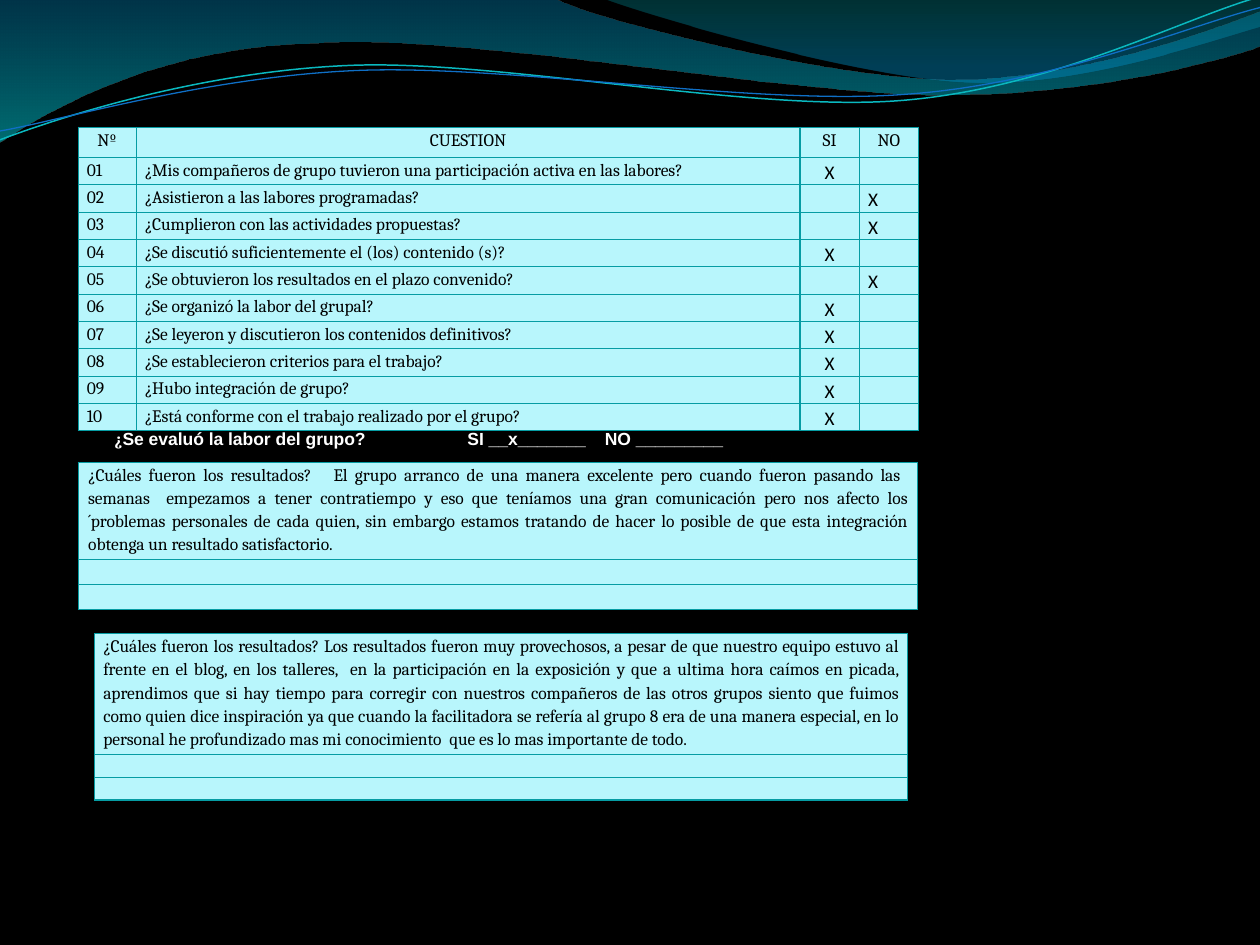
from lxml import etree
from pptx import Presentation
from pptx.dml.color import RGBColor
from pptx.enum import text
from pptx.oxml.ns import qn
from pptx.util import Inches, Pt

# Content
HEADINGS = ["Nº", "CUESTION", "SI", "NO"]
QUESTIONS = [
    ("¿Mis compañeros de grupo tuvieron una participación activa en las labores?", "SI"),
    ("¿Asistieron a las labores programadas?", "NO"),
    ("¿Cumplieron con las actividades propuestas?", "NO"),
    ("¿Se discutió suficientemente el (los) contenido (s)?", "SI"),
    ("¿Se obtuvieron los resultados en el plazo convenido?", "NO"),
    ("¿Se organizó la labor del grupal?", "SI"),
    ("¿Se leyeron y discutieron los contenidos definitivos?", "SI"),
    ("¿Se establecieron criterios para el trabajo?", "SI"),
    ("¿Hubo integración de grupo?", "SI"),
    ("¿Está conforme con el trabajo realizado por el grupo?", "SI"),
]
EVALUATED = [("¿", "Cambria"),
             ("Se evaluó la labor del grupo?\tSI __x_______\tNO _________", "Arial")]
GROUP_RESULT = (
    "¿Cuáles fueron los resultados?   El grupo arranco de una manera excelente pero cuando "
    "fueron pasando las  semanas  empezamos a tener contratiempo y eso que teníamos una gran "
    "comunicación pero nos afecto los ´problemas personales de cada quien, sin embargo estamos "
    "tratando de hacer lo posible de que esta integración obtenga un resultado satisfactorio.")
PERSONAL_RESULT = (
    "¿Cuáles fueron los resultados? Los resultados fueron muy provechosos, a pesar de que "
    "nuestro equipo estuvo al frente en el blog, en los talleres,  en la participación en la "
    "exposición y que a ultima hora caímos en picada, aprendimos que si hay tiempo para corregir "
    "con nuestros compañeros de las otros grupos siento que fuimos como quien dice inspiración ya "
    "que cuando la facilitadora se refería al grupo 8 era de una manera especial, en lo personal "
    "he profundizado mas mi conocimiento  que es lo mas importante de todo.")

THEME = dict(background="000000", cell="B8F6FC", border="069CA3", ink="000000", light="FFFFFF",
             body="Cambria", mark="Calibri", body_size=10, mark_size=11, spacing=1.15)

# Waves: a start point, then line ends (2 numbers) or Bezier curves (6 numbers)
WAVE_FILLS = [
    ([(0, 0), (4.4, -0.01), (4.76, 0.17, 6.64, 0.63, 7.58, 0.63),
      (8.53, 0.63, 9.58, 0.26, 10, 0.09), (10.01, 0.36),
      (9.83, 0.44, 8.7, 0.76, 7.46, 0.75), (6.22, 0.75, 3.82, 0.28, 2.57, 0.34),
      (1.29, 0.36, 0.46, 0.83, -0.01, 1.13)],
     [(0, "0074A1", 45), (1, "00C6CF", 55)]),
    ([(4.79, -0.01), (5.09, 0.11, 6.82, 0.62, 7.69, 0.65),
      (8.56, 0.69, 9.61, 0.32, 10, 0.21), (10, 0)],
     [(0, "00A1A9", 30), (0.8, "008BBF", 45)]),
]
WAVE_LINES = [
    ([(0, 1.11), (0.48, 0.93, 1.58, 0.57, 2.77, 0.52), (3.95, 0.47, 5.93, 0.89, 7.13, 0.8),
      (8.33, 0.71, 9.38, 0.15, 9.98, -0.02)], "0AB8BF", 0.85),
    ([(0, 1.04), (0.47, 0.96, 1.64, 0.61, 2.83, 0.56), (4.03, 0.51, 5.97, 0.84, 7.17, 0.75),
      (8.36, 0.67, 9.41, 0.21, 10, 0.06)], "0F6FC6", 0.75),
]


def rgb(name):
    return RGBColor.from_string(THEME.get(name, name))


def add_wave(slide, outline, close):
    """Draw straight segments, then bend those that have control points."""
    ends = [(Inches(segment[-2]), Inches(segment[-1])) for segment in outline]
    builder = slide.shapes.build_freeform(*ends[0])
    builder.add_line_segments(ends[1:], close=close)
    wave = builder.convert_to_shape()
    wave.shadow.inherit = False
    straights = list(wave._element.iter(qn("a:lnTo")))
    for straight, segment in zip(straights, outline[1:]):
        if len(segment) == 6:
            curve = etree.Element(qn("a:cubicBezTo"))
            for x, y in zip(segment[::2], segment[1::2]):
                etree.SubElement(curve, qn("a:pt"), x=str(Inches(x) - wave.left),
                                 y=str(Inches(y) - wave.top))
            straight.getparent().replace(straight, curve)
    return wave


def style_run(run, font, size, color, bold=False):
    run.font.name, run.font.size, run.font.bold = font, Pt(size), bold
    run.font.color.rgb = rgb(color)


def fill_cell(cell, inset, words, align, is_mark):
    cell.fill.solid()
    cell.fill.fore_color.rgb = rgb("cell")
    cell.margin_left = cell.margin_right = Inches(inset)
    cell.margin_top = cell.margin_bottom = 0
    line = cell.text_frame.paragraphs[0]
    line.text, line.alignment, line.line_spacing = words, align, THEME["spacing"]
    kind = "mark" if is_mark else "body"
    for run in line.runs:
        style_run(run, THEME[kind], THEME[kind + "_size"], "ink")
    if not words:  # keeps an empty row low
        etree.SubElement(line._p, qn("a:endParaRPr"), sz=str(THEME["body_size"] * 100))
    properties = cell._tc.get_or_add_tcPr()
    for index, side in enumerate(("lnL", "lnR", "lnT", "lnB")):
        border = etree.Element(qn("a:" + side), w=str(Pt(0.75)))
        solid = etree.SubElement(border, qn("a:solidFill"))
        etree.SubElement(solid, qn("a:srgbClr"), val=THEME["border"])
        properties.insert(index, border)


def add_grid(slide, left, top, widths, heights, inset, rows):
    """Each cell is (words, alignment, is_mark)."""
    table = slide.shapes.add_table(len(rows), len(widths), Inches(left), Inches(top),
                                   Inches(sum(widths)), Inches(sum(heights))).table
    table.first_row = table.horz_banding = False
    for column, width in zip(table.columns, widths):
        column.width = Inches(width)
    for row, height, cells in zip(table.rows, heights, rows):
        row.height = Inches(height)
        for cell, content in zip(row.cells, cells):
            fill_cell(cell, inset, *content)


def main():
    deck = Presentation()
    deck.slide_width, deck.slide_height = Inches(10), Inches(7.5)
    slide = deck.slides.add_slide(deck.slide_layouts[6])
    slide.background.fill.solid()
    slide.background.fill.fore_color.rgb = rgb("background")

    # Waves along the top
    for outline, stops in WAVE_FILLS:
        wave = add_wave(slide, outline, True)
        wave.line.fill.background()
        wave.fill.gradient()
        wave.fill.gradient_angle = 270
        for stop, (position, color, _) in zip(wave.fill.gradient_stops, stops):
            stop.position, stop.color.rgb = position, rgb(color)
        tints = list(wave._element.spPr.iter(qn("a:srgbClr")))
        for tint, (_, _, opacity) in zip(tints, stops):
            etree.SubElement(tint, qn("a:alpha"), val=str(opacity * 1000))
    for outline, color, width in WAVE_LINES:
        wave = add_wave(slide, outline, False)
        wave.fill.background()
        wave.line.color.rgb, wave.line.width = rgb(color), Pt(width)

    # Questionnaire
    center, justify = text.PP_ALIGN.CENTER, text.PP_ALIGN.JUSTIFY
    rows = [[(heading, center, False) for heading in HEADINGS]]
    for number, (question, answer) in enumerate(QUESTIONS, 1):
        rows.append([(f"{number:02d}", justify, False), (question, justify, False),
                     ("X" if answer == "SI" else "", center, True),
                     ("X" if answer == "NO" else "", justify, True)])
    add_grid(slide, 0.62, 1.01, [0.46, 5.27, 0.47, 0.47], [0.24] + [0.2] * len(QUESTIONS),
             0.07, rows)

    # Evaluation line, with its answers on tab stops
    evaluation = slide.shapes.add_textbox(Inches(0.55), Inches(3.35), Inches(5.55), Inches(0.27))
    frame = evaluation.text_frame
    frame.word_wrap, frame.margin_left = True, Inches(0.36)
    line = frame.paragraphs[0]
    for words, font in EVALUATED:
        run = line.add_run()
        run.text = words
        style_run(run, font, THEME["body_size"], "light", True)
    tabs = etree.SubElement(line._p.get_or_add_pPr(), qn("a:tabLst"))
    for stop in (2.8, 3.89):
        etree.SubElement(tabs, qn("a:tab"), pos=str(Inches(stop)), algn="l")

    # Written results, each above two empty rows
    for words, left, top, width, heights, inset in [
            (GROUP_RESULT, 0.62, 3.67, 6.66, [0.18, 0.2, 0.2], 0.08),
            (PERSONAL_RESULT, 0.75, 5.03, 6.45, [0.96, 0.18, 0.18], 0.07)]:
        add_grid(slide, left, top, [width], heights, inset,
                 [[(entry, justify, False)] for entry in (words, "", "")])

    deck.save("out.pptx")


if __name__ == "__main__":
    main()
